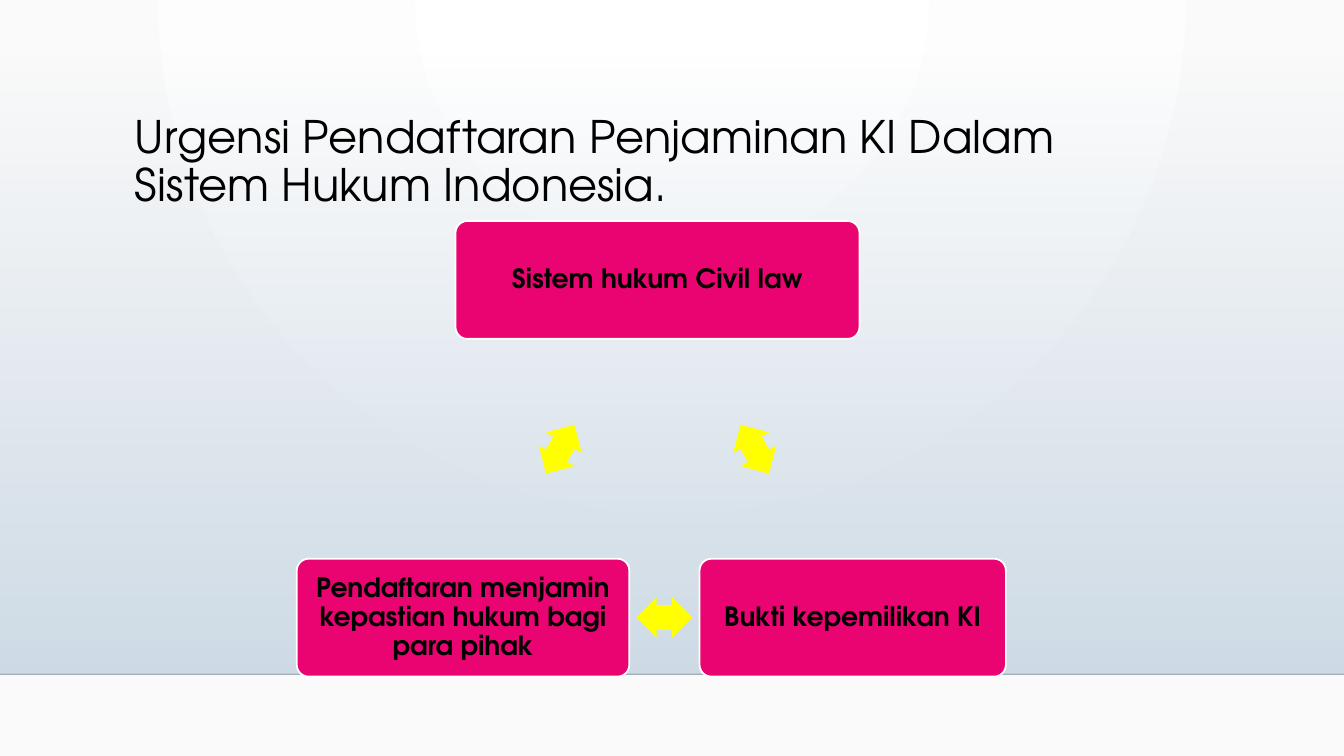
from lxml import etree
from pptx import Presentation
from pptx.dml.color import RGBColor
from pptx.enum.shapes import MSO_CONNECTOR as CONN, MSO_SHAPE as SHAPE
from pptx.enum.text import MSO_ANCHOR as ANCHOR, PP_ALIGN as ALIGN
from pptx.oxml.ns import qn
from pptx.util import Cm, Pt

WIDTH, HEIGHT = 33.87, 19.05


def rgb(value):
    return RGBColor.from_string(value)


def set_alpha(element, percent):
    """Give the first colour inside element an opacity in percent."""
    color = next(element.iter(qn("a:srgbClr")))
    etree.SubElement(color, qn("a:alpha"), val=str(percent * 1000))


class Deck:
    font, ink, white = "TeX Gyre Adventor", "000000", "FFFFFF"
    pink, yellow = "EA0472", "FFFF00"

    def __init__(self):
        self.prs = Presentation()
        self.prs.slide_width, self.prs.slide_height = Cm(WIDTH), Cm(HEIGHT)
        self.s = self.prs.slides.add_slide(self.prs.slide_layouts[5])

    def gradient(self, fill, colors):
        fill.gradient()
        for stop, color in zip(fill.gradient_stops, colors):
            stop.color.rgb = rgb(color)

    def background(self, colors):
        """Fill the slide with a gradient that spreads from the top centre."""
        self.gradient(self.s.background.fill, colors)
        lin = next(self.s._element.iter(qn("a:lin")))
        spread = etree.Element(qn("a:path"))
        spread.set("path", "circle")
        etree.SubElement(spread, qn("a:fillToRect"),
                         l="43000", t="0", r="43000", b="100000")
        lin.getparent().replace(lin, spread)

    def shape(self, kind, x, y, w, h, adjustments=()):
        sp = self.s.shapes.add_shape(kind, Cm(x), Cm(y), Cm(w), Cm(h))
        sp.shadow.inherit = False
        for i, value in enumerate(adjustments):
            sp.adjustments[i] = value
        return sp

    def sky(self, y, h, colors):
        """Add a full-width panel that fades in from clear to solid."""
        sp = self.shape(SHAPE.RECTANGLE, 0, y, WIDTH, h)
        self.gradient(sp.fill, colors)
        sp.fill.gradient_angle = 270
        set_alpha(sp._element, 0)
        sp.line.fill.background()

    def horizon(self, y, color, opacity):
        line = self.s.shapes.add_connector(
            CONN.STRAIGHT, 0, Cm(y), Cm(WIDTH), Cm(y))
        line.line.color.rgb = rgb(color)
        line.line.width = Pt(1)
        sp_pr = line._element.spPr
        set_alpha(sp_pr, opacity)
        etree.SubElement(sp_pr, qn("a:effectLst"))

    def text(self, sp, words, size, bold, align, inset):
        tf = sp.text_frame
        frame = dict(word_wrap=True, vertical_anchor=ANCHOR.MIDDLE,
                     margin_left=Cm(inset), margin_right=Cm(inset),
                     margin_top=Cm(0.13), margin_bottom=Cm(0.13))
        for name, value in frame.items():
            setattr(tf, name, value)
        p = tf.paragraphs[0]
        p.alignment, p.line_spacing = align, 0.9
        r = p.add_run()
        r.text = words
        for name, value in dict(name=self.font, size=Pt(size), bold=bold).items():
            setattr(r.font, name, value)
        r.font.color.rgb = rgb(self.ink)

    def title(self, words, x, y, w, h):
        sp = self.s.shapes.title
        place = dict(left=x, top=y, width=w, height=h)
        for name, value in place.items():
            setattr(sp, name, Cm(value))
        self.text(sp, words, 32, False, ALIGN.LEFT, 0.25)
        self.s.shapes._spTree.append(sp._element)

    def box(self, words, x, y, w):
        sp = self.shape(SHAPE.ROUNDED_RECTANGLE, x, y, w, 2.97, [0.1])
        sp.fill.solid()
        sp.fill.fore_color.rgb = rgb(self.pink)
        sp.line.color.rgb = rgb(self.white)
        sp.line.width = Pt(1.25)
        self.text(sp, words, 19, True, ALIGN.CENTER, 0.28)

    def arrow(self, x, y, rotation):
        sp = self.shape(SHAPE.LEFT_RIGHT_ARROW, x, y, 1.42, 1.04, [0.6, 0.5])
        sp.rotation = rotation
        sp.fill.solid()
        sp.fill.fore_color.rgb = rgb(self.yellow)
        sp.line.fill.background()


def main():
    deck = Deck()
    deck.background(["FFFFFF", "FAFAFA"])
    deck.sky(1.3, 15.69, ["CEDBE6", "D0DDE7"])
    deck.horizon(16.99, "000001", 20)
    deck.title("Urgensi Pendaftaran Penjaminan KI Dalam Sistem Hukum Indonesia.",
               3.15, 2.64, 26.67, 2.92)

    top, bottom = 5.57, 14.08
    deck.box("Sistem hukum Civil law", 11.48, top, 10.18)
    deck.box("Bukti kepemilikan KI", 17.63, bottom, 7.72)
    deck.box("Pendaftaran menjamin kepastian hukum bagi para pihak",
             7.48, bottom, 8.38)

    for x, y, rotation in [(18.31, 10.8, 60), (16.03, 15.04, 180),
                           (13.41, 10.8, 300)]:
        deck.arrow(x, y, rotation)
    deck.prs.save("out.pptx")


if __name__ == "__main__":
    main()
